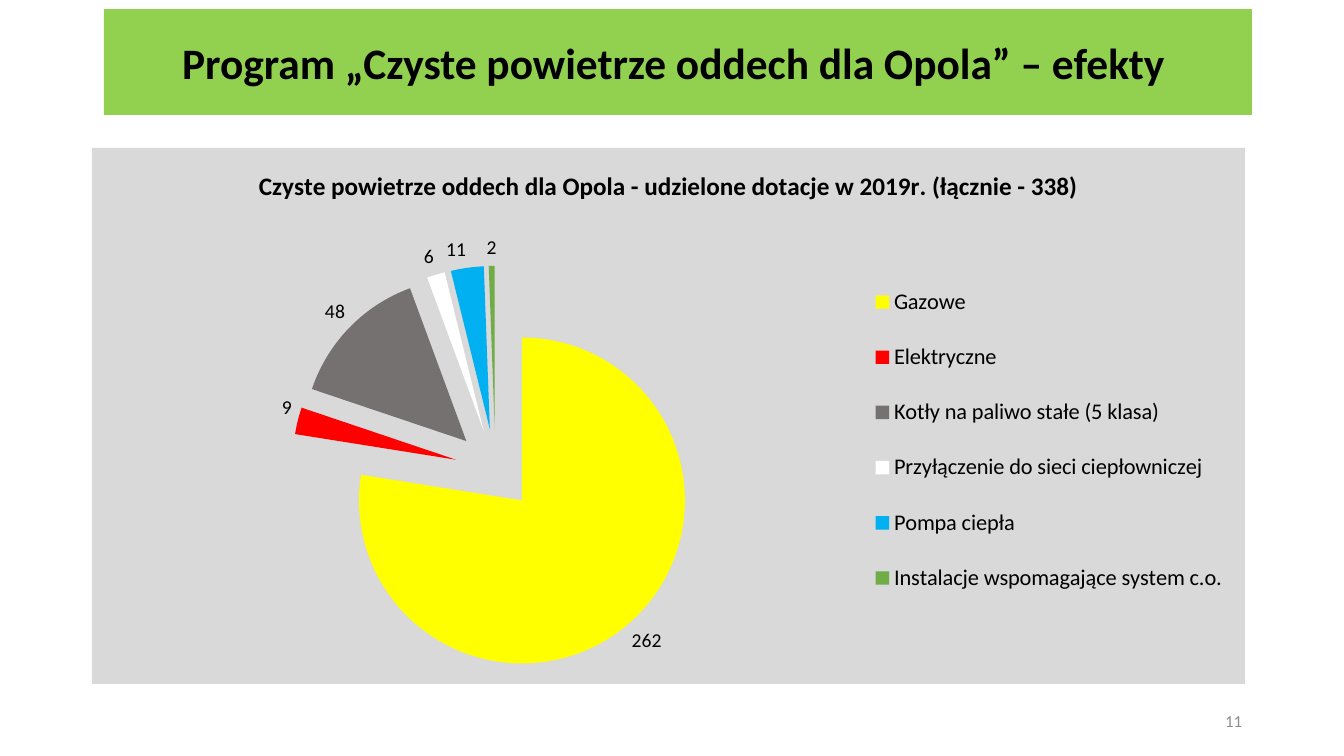
"""Build the slide on the effects of the Opole clean air programme."""
import lxml.etree
import pptx
import pptx.chart.data
import pptx.dml.color
import pptx.enum.chart
import pptx.enum.shapes
import pptx.enum.text
import pptx.oxml
import pptx.oxml.ns
import pptx.util

FONT = "Calibri"
PX = 914400 / 100.8
ALIGN = pptx.enum.text.PP_ALIGN
GRANTS = [
    ("Gazowe", 262, "FFFF00"),
    ("Elektryczne", 9, "FF0000"),
    ("Kotły na paliwo stałe (5 klasa)", 48, "767171"),
    ("Przyłączenie do sieci ciepłowniczej", 6, "FFFFFF"),
    ("Pompa ciepła", 11, "00B0F0"),
    ("Instalacje wspomagające system c.o.", 2, "70AD47"),
]


def px(*lengths):
    return [pptx.util.Emu(round(n * PX)) for n in lengths]


def rgb(value):
    return pptx.dml.color.RGBColor.from_string(value)


def set_font(font, size, color="000000", bold=False):
    font.name = FONT
    font.size = pptx.util.Pt(size)
    font.bold = bold
    font.color.rgb = rgb(color)


def write(sp, text, align, size, color="000000", bold=False):
    tf = sp.text_frame
    tf.word_wrap = True
    tf.vertical_anchor = pptx.enum.text.MSO_ANCHOR.MIDDLE
    p = tf.paragraphs[0]
    p.alignment = align
    r = p.add_run()
    r.text = text
    set_font(r.font, size, color, bold)


def add_banner(s, box, text, fill):
    sp = s.shapes.add_shape(pptx.enum.shapes.MSO_SHAPE.RECTANGLE, *px(*box))
    sp.shadow.inherit = False
    sp.fill.solid()
    sp.fill.fore_color.rgb = rgb(fill)
    sp.line.fill.background()
    write(sp, text, ALIGN.CENTER, 31, bold=True)


def add_page_number(s, box, text):
    sp = s.shapes.add_textbox(*px(*box))
    write(sp, text, ALIGN.RIGHT, 12, "8C8C8C")


def chart_xml(tag, body="", attrs=""):
    ns = pptx.oxml.ns.nsdecls("c", "a")
    return pptx.oxml.parse_xml(f"<c:{tag} {ns} {attrs}>{body}</c:{tag}>")


def set_layout(parent, index, box, target=""):
    for old in parent.findall(pptx.oxml.ns.qn("c:layout")):
        parent.remove(old)
    modes = '<c:xMode val="edge"/><c:yMode val="edge"/>'
    sizes = "".join(f'<c:{k} val="{v}"/>' for k, v in zip("xywh", box))
    body = f"<c:manualLayout>{target}{modes}{sizes}</c:manualLayout>"
    parent.insert(index, chart_xml("layout", body))


def add_pie(s, box, title, grants, fill):
    enums = pptx.enum.chart
    names, values, colors = zip(*grants)
    data = pptx.chart.data.CategoryChartData()
    data.categories = names
    data.add_series("Dotacje", values)
    chart = s.shapes.add_chart(enums.XL_CHART_TYPE.PIE, *px(*box), data).chart
    set_font(chart.font, 10)
    root = chart.element
    solid = f'<a:solidFill><a:srgbClr val="{fill}"/></a:solidFill>'
    root.chart.addnext(chart_xml("spPr", solid + "<a:ln><a:noFill/></a:ln>"))

    chart.has_title = True
    r = chart.chart_title.text_frame.paragraphs[0].add_run()
    r.text = title
    set_font(r.font, 18, bold=True)
    chart.chart_title.include_in_layout = False

    chart.has_legend = True
    legend = chart.legend
    legend.position = enums.XL_LEGEND_POSITION.RIGHT
    legend.include_in_layout = False
    set_font(legend.font, 16)
    set_layout(root.chart.find(pptx.oxml.ns.qn("c:legend")), 1, (0.67, 0.21, 0.32, 0.67))

    plot = chart.plots[0]
    plot.vary_by_categories = True
    plot.has_data_labels = True
    labels = plot.data_labels
    labels.show_value = True
    labels.show_percentage = False
    labels.position = enums.XL_LABEL_POSITION.OUTSIDE_END
    set_font(labels.font, 14)
    set_layout(root.chart.plotArea, 0, (0.07, 0.22, 0.56, 0.76),
               '<c:layoutTarget val="inner"/>')

    series = plot.series[0]
    for i, color in enumerate(colors):
        point = series.points[i].format
        point.fill.solid()
        point.fill.fore_color.rgb = rgb(color)
        point.line.fill.background()
    first = series._element.find(pptx.oxml.ns.qn("c:dPt"))
    first.addprevious(chart_xml("explosion", attrs='val="25"'))


def main():
    prs = pptx.Presentation()
    prs.slide_width, prs.slide_height = px(1344, 756)
    s = prs.slides.add_slide(prs.slide_layouts[6])
    add_banner(s, (104, 9, 1148, 106),
               "Program „Czyste powietrze oddech dla Opola” – efekty ", "92D050")
    add_page_number(s, (950, 701, 302, 40), "11")
    add_pie(s, (92, 148, 1153, 536),
            "Czyste powietrze oddech dla Opola - udzielone dotacje w 2019r. (łącznie - 338)",
            GRANTS, "D9D9D9")
    prs.save("out.pptx")


if __name__ == "__main__":
    main()
